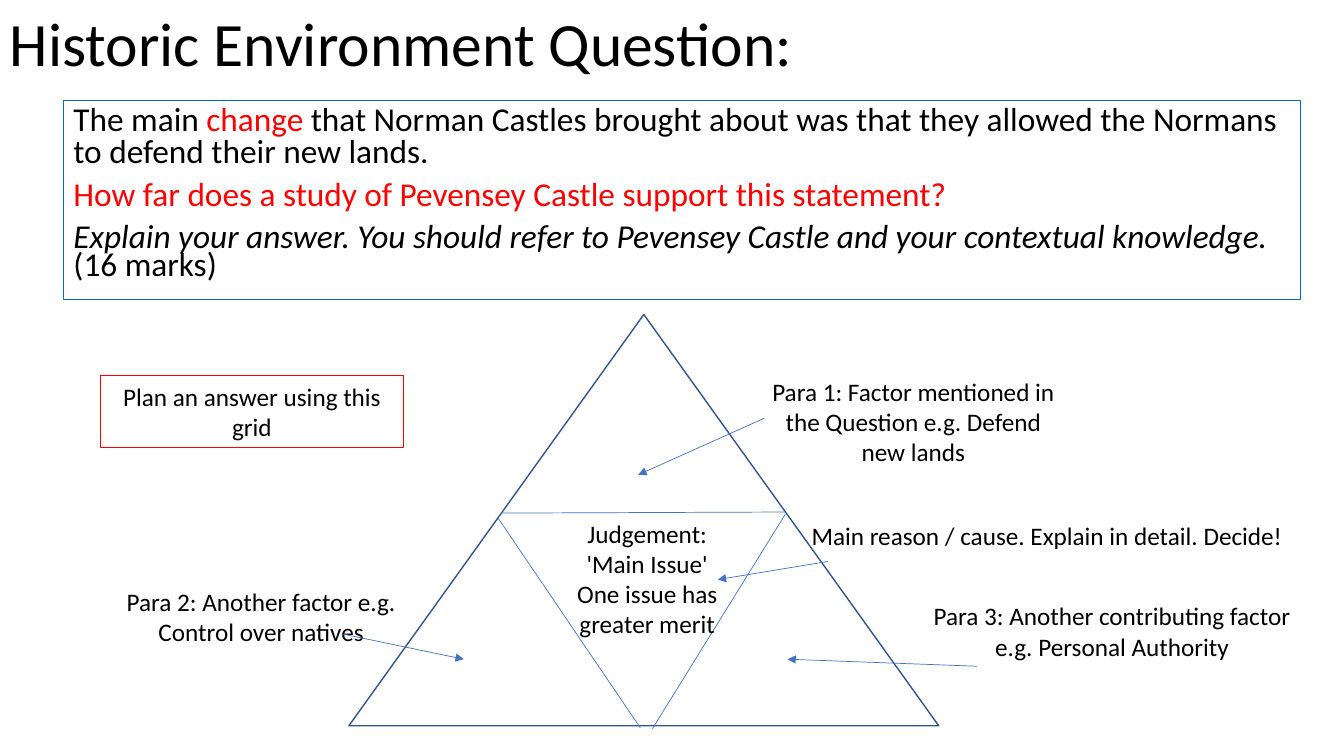
"""Builds a slide with an exam question and a triangular answer-planning grid."""
import pptx
import pptx.util
import pptx.dml.color
import pptx.enum.shapes
import pptx.enum.text
import pptx.oxml
import pptx.oxml.ns
from lxml import etree

THEME = {
    "font": "Calibri",
    "colors": {"text": "000000", "accent": "FF0000", "frame": "0070C0",
               "triangle": "325491", "line": "4472C4"},
    "sizes": {"title": 44, "question": 23.8, "label": 18},
    "widths": {"frame": 0.75, "triangle": 1, "line": 0.5},
}
SLIDE_W, SLIDE_H = 13.33, 7.5

TITLE = ("Historic Environment Question:", (0, 0.8, 86.27, 10.8))
QUESTION_AT = (4.73, 13.33, 92.05, 26.27)
QUESTION = [
    (0.8, 0, [("The main ", "text", False), ("change", "accent", False),
              (" that Norman Castles brought about was that they allowed "
               "the Normans to defend their new lands.", "text", False)]),
    (0.7, 10, [("How far does a study of Pevensey Castle support this statement?",
                "accent", False)]),
    (0.7, 10, [("Explain your answer. You should refer to Pevensey Castle and "
                "your contextual knowledge.", "text", True),
               (" (16 marks)", "text", False)]),
]
TRIANGLE_AT = (25.96, 41.6, 43.89, 54.4)
PLAN = (["Plan an answer using this grid"], (7.5, 49.73, 22.5, 9.47))
LABELS = [
    (["Para 1: Factor mentioned in the Question e.g. Defend new lands"],
     (56.71, 49.07, 22.5, 13.47)),
    (["Para 2: Another factor e.g. Control over natives"],
     (8.18, 76.93, 22.5, 9.47)),
    (["Para 3: Another contributing factor e.g. Personal Authority"],
     (67.44, 78.8, 30.61, 9.47)),
    (["Judgement:", "'Main Issue'", "One issue has", "greater merit"],
     (38.41, 67.87, 19.5, 17.47)),
    (["Main reason / cause. Explain in detail. Decide!"],
     (59.64, 68.13, 36.53, 9.47)),
]
DIVIDERS = [
    (37.28, 67.87, 58.44, 67.73),
    (48.54, 96.4, 58.44, 68),
    (37.06, 68.53, 47.64, 96.27),
]
ARROWS = [
    (56.86, 55.33, 47.49, 62.8),
    (25.51, 83.87, 34.51, 87.2),
    (72.69, 88.13, 58.59, 87.2),
    (61.59, 74.27, 53.41, 76.67),
]


def place(shares):
    """Turn percentages of the slide into alternating x and y lengths."""
    return [pptx.util.Inches(share / 100 * side)
            for share, side in zip(shares, (SLIDE_W, SLIDE_H) * 2)]


def color(name):
    """Return a theme colour."""
    return pptx.dml.color.RGBColor.from_string(THEME["colors"][name])


def outline(sp, color_name, width_name):
    """Draw a line in a theme colour and width."""
    sp.line.color.rgb = color(color_name)
    sp.line.width = pptx.util.Pt(THEME["widths"][width_name])


def add_outlined(s, kind, at, color_name, width_name):
    """Add an unfilled shape."""
    sp = s.shapes.add_shape(kind, *place(at))
    sp.shadow.inherit = False
    sp.fill.background()
    outline(sp, color_name, width_name)
    return sp


def add_line(s, ends, arrow=False):
    """Add a thin line, with an arrowhead at its end if asked."""
    sp = s.shapes.add_connector(pptx.enum.shapes.MSO_CONNECTOR.STRAIGHT, *place(ends))
    outline(sp, "line", "line")
    if arrow:
        etree.SubElement(sp.line._get_or_add_ln(), pptx.oxml.ns.qn("a:tailEnd"),
                         type="triangle")
    etree.SubElement(sp._element.spPr, pptx.oxml.ns.qn("a:effectLst"))


def write(sp, paragraphs, size, align="LEFT", anchor="TOP"):
    """Fill a shape with paragraphs of (line spacing, space before, runs)."""
    tf = sp.text_frame
    tf.word_wrap = True
    tf.vertical_anchor = getattr(pptx.enum.text.MSO_ANCHOR, anchor)
    for i, (spacing, before, runs) in enumerate(paragraphs):
        p = tf.add_paragraph() if i else tf.paragraphs[0]
        p.alignment = getattr(pptx.enum.text.PP_ALIGN, align)
        p.line_spacing = spacing
        p.space_before = pptx.util.Pt(before)
        for text, color_name, italic in runs:
            r = p.add_run()
            r.text = text
            r.font.name = THEME["font"]
            r.font.size = pptx.util.Pt(THEME["sizes"][size])
            r.font.color.rgb = color(color_name)
            r.font.italic = italic


def write_label(sp, lines):
    """Write centred label lines."""
    write(sp, [(1.0, 0, [(line, "text", False)]) for line in lines], "label", "CENTER")


def main():
    """Build and save the slide."""
    prs = pptx.Presentation()
    prs.slide_width = pptx.util.Inches(SLIDE_W)
    prs.slide_height = pptx.util.Inches(SLIDE_H)
    s = prs.slides.add_slide(prs.slide_layouts[6])
    shape = pptx.enum.shapes.MSO_SHAPE

    text, at = TITLE
    write(s.shapes.add_textbox(*place(at)), [(0.9, 0, [(text, "text", False)])],
          "title", anchor="MIDDLE")
    write(add_outlined(s, shape.RECTANGLE, QUESTION_AT, "frame", "frame"),
          QUESTION, "question")
    add_outlined(s, shape.ISOSCELES_TRIANGLE, TRIANGLE_AT, "triangle", "triangle")
    for ends in DIVIDERS:
        add_line(s, ends)
    lines, at = PLAN
    write_label(add_outlined(s, shape.RECTANGLE, at, "accent", "frame"), lines)
    for lines, at in LABELS:
        write_label(s.shapes.add_textbox(*place(at)), lines)
    for ends in ARROWS:
        add_line(s, ends, arrow=True)
    prs.save("out.pptx")


if __name__ == "__main__":
    main()
